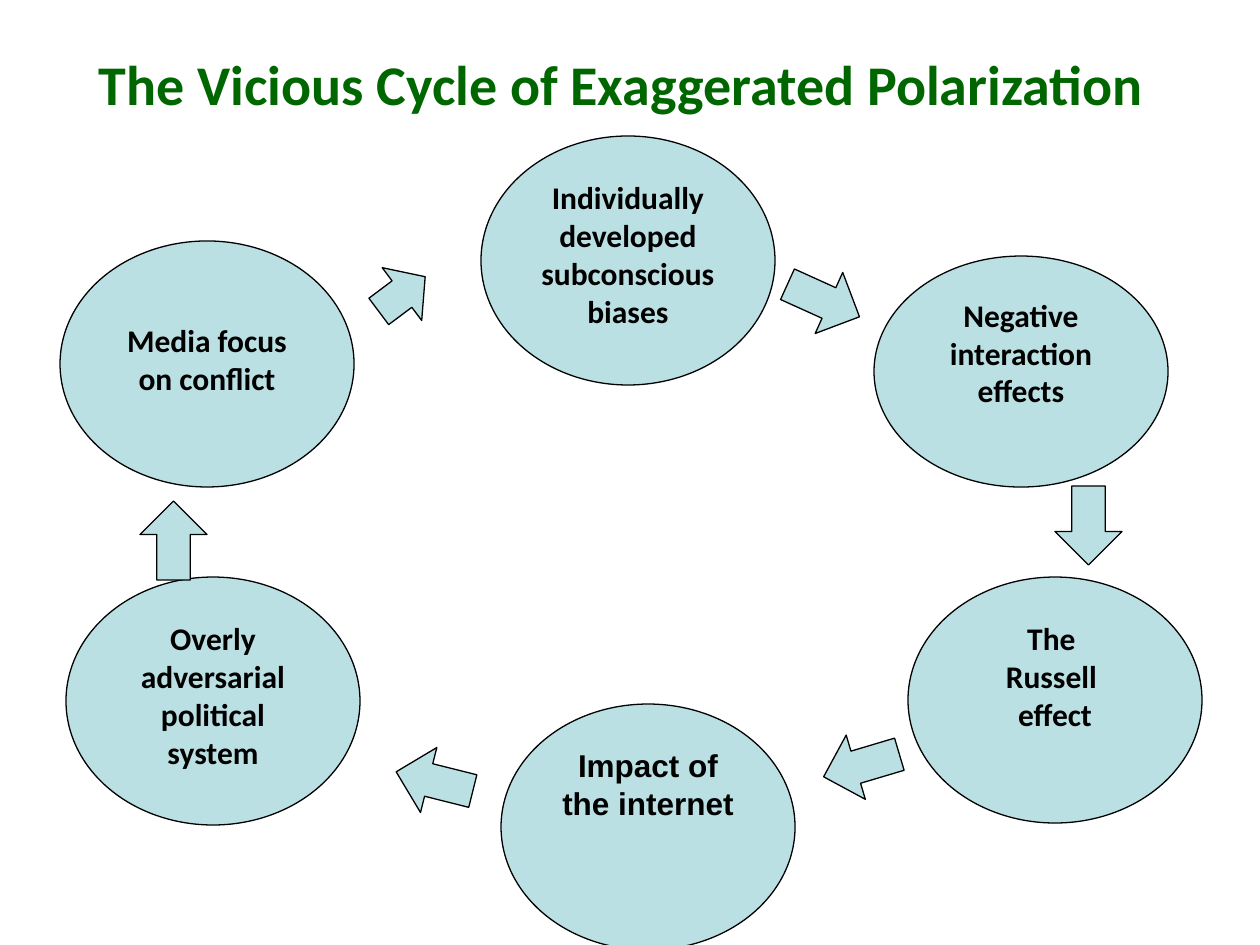
from pptx import Presentation
from pptx.dml.color import RGBColor
from pptx.enum.shapes import MSO_SHAPE
from pptx.enum.text import MSO_ANCHOR, PP_ALIGN
from pptx.util import Emu, Pt

ELLIPSE, DOWN_ARROW = MSO_SHAPE.OVAL, MSO_SHAPE.DOWN_ARROW
CENTER = PP_ALIGN.CENTER
TOP, MIDDLE = MSO_ANCHOR.TOP, MSO_ANCHOR.MIDDLE

PALE_BLUE = RGBColor(0xBB, 0xE0, 0xE3)
BLACK = RGBColor(0x00, 0x00, 0x00)
GREEN = RGBColor(0x00, 0x66, 0x00)

PX_PER_INCH = 126
STAGE_WIDTH = 294
TEXT_INSET = 6

# Stages, clockwise: left, top, height, lines, font, top inset
STAGES = [
    (421, 0, 249, ["Individually developed subconscious biases"], "Calibri", TEXT_INSET),
    (814, 120, 231, ["Negative interaction effects"], "Calibri", TEXT_INSET),
    (848, 441, 246, ["The ", "Russell ", "effect"], "Calibri", TEXT_INSET),
    (441, 568, 246, ["Impact of the internet"], "Arial", TEXT_INSET),
    (6, 441, 248, ["Overly", "adversarial", "political system"], "Calibri", TEXT_INSET),
    (0, 105, 246, ["Media focus on conflict"], "Calibri", 44),
]

# Arrows, clockwise: left, top, width, height, rotation
ARROWS = [
    (730, 125, 67, 79, 294.3),
    (995, 350, 67, 79, 0),
    (768, 590, 67, 79, 73.4),
    (341, 606, 67, 79, 104.1),
    (80, 365, 67, 79, 180),
    (309, 129, 66, 58, 233.2),
]


def px(length):
    return Emu(round(length * 914400 / PX_PER_INCH))


def add_line(paragraph, text, font_name, size, color):
    paragraph.alignment = CENTER
    run = paragraph.add_run()
    run.text = text
    run.font.name = font_name
    run.font.size = Pt(size)
    run.font.bold = True
    run.font.color.rgb = color


def add_outlined(slide, preset, left, top, width, height):
    outlined = slide.shapes.add_shape(preset, px(left), px(top), px(width), px(height))
    outlined.shadow.inherit = False
    outlined.fill.solid()
    outlined.fill.fore_color.rgb = PALE_BLUE
    outlined.line.color.rgb = BLACK
    outlined.line.width = Pt(0.75)
    return outlined


def add_title(slide, left, top, width, height):
    title = slide.shapes.title
    title.left, title.top = px(left), px(top)
    title.width, title.height = px(width), px(height)
    title.text_frame.vertical_anchor = MIDDLE
    add_line(title.text_frame.paragraphs[0],
             "The Vicious Cycle of Exaggerated Polarization", "Calibri", 32, GREEN)


def add_cycle(slide, left, top):
    # Stages
    for x, y, height, lines, font_name, inset in STAGES:
        stage = add_outlined(slide, ELLIPSE, left + x, top + y, STAGE_WIDTH, height)
        frame = stage.text_frame
        frame.word_wrap = True
        frame.vertical_anchor = TOP
        frame.margin_top = px(inset)
        for index, line in enumerate(lines):
            paragraph = frame.add_paragraph() if index else frame.paragraphs[0]
            add_line(paragraph, line, font_name, 18, BLACK)

    # Arrows between the stages
    for x, y, width, height, rotation in ARROWS:
        arrow = add_outlined(slide, DOWN_ARROW, left + x, top + y, width, height)
        arrow.rotation = rotation


def main():
    prs = Presentation()
    prs.slide_width, prs.slide_height = px(1260), px(945)
    slide = prs.slides.add_slide(prs.slide_layouts[5])
    add_title(slide, 23, 4, 1197, 158)
    add_cycle(slide, 60, 136)
    prs.save("out.pptx")


if __name__ == "__main__":
    main()
